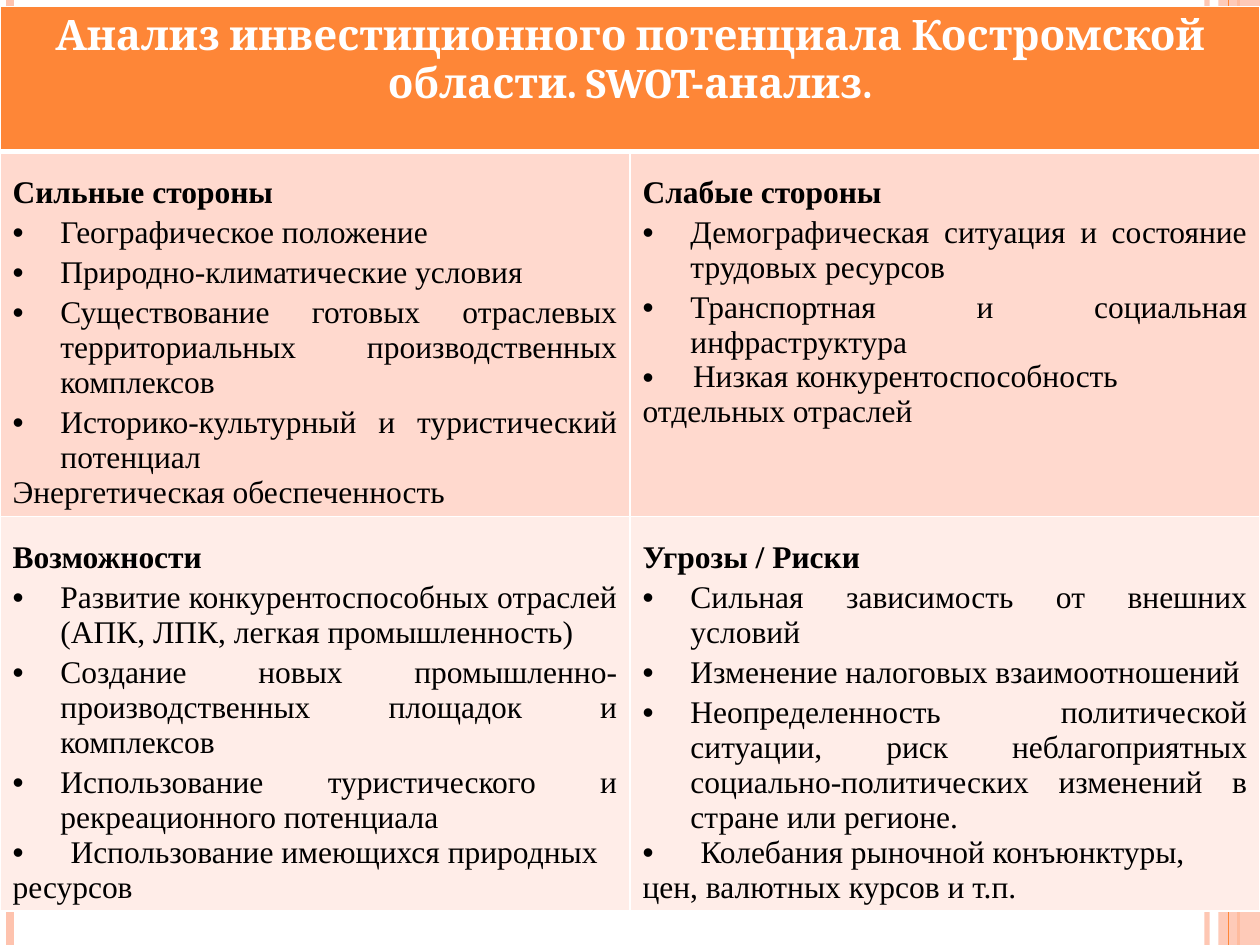
import pptx
import pptx.dml.color
import pptx.enum.shapes
import pptx.enum.text
import pptx.oxml.ns
import pptx.util
from lxml import etree

Inches = pptx.util.Inches
Pt = pptx.util.Pt
ALIGN = pptx.enum.text.PP_ALIGN
qn = pptx.oxml.ns.qn

COLORS = {
    "accent": "FE8637",
    "stripe": "FEC3AE",
    "upper": "FFD9CE",
    "lower": "FFEDE8",
    "white": "FFFFFF",
    "black": "000000",
}
TITLE = "Анализ инвестиционного потенциала Костромской области. SWOT-анализ."
QUADRANTS = [
    [
        {
            "heading": "Сильные стороны",
            "points": [
                "Географическое положение",
                "Природно-климатические условия",
                "Существование готовых отраслевых территориальных производственных комплексов",
                "Историко-культурный и туристический потенциал",
            ],
            "closing": "Энергетическая обеспеченность",
            "closing_format": {},
        },
        {
            "heading": "Слабые стороны",
            "points": [
                "Демографическая ситуация и состояние трудовых ресурсов",
                "Транспортная и социальная инфраструктура",
            ],
            "closing": "\tНизкая конкурентоспособность отдельных отраслей",
            "closing_format": {"bullet": True, "tab": 0.4},
        },
    ],
    [
        {
            "heading": "Возможности",
            "points": [
                "Развитие конкурентоспособных отраслей (АПК, ЛПК, легкая промышленность)",
                "Создание новых промышленно-производственных площадок и комплексов",
                "Использование туристического и рекреационного потенциала",
            ],
            "closing": "\tИспользование имеющихся природных ресурсов",
            "closing_format": {"bullet": True, "tab": 0.46},
        },
        {
            "heading": "Угрозы / Риски",
            "points": [
                "Сильная зависимость от внешних условий",
                "Изменение налоговых взаимоотношений",
                "Неопределенность политической ситуации, риск неблагоприятных "
                "социально-политических изменений в стране или регионе.",
            ],
            "closing": "\tКолебания рыночной конъюнктуры, цен, валютных курсов и т.п.",
            "closing_format": {"bullet": True, "tab": 0.46},
        },
    ],
]


def rgb(name):
    """Return the named colour."""
    return pptx.dml.color.RGBColor.from_string(COLORS[name])


def write(paragraph, text, font="Times New Roman", size=18, color="black", bold=False,
          align=ALIGN.LEFT, spacing=None, before=0, bullet=False, hang=0, tab=None):
    """Fill a paragraph with one formatted run."""
    run = paragraph.add_run()
    run.text = text
    run.font.name = font
    run.font.size = Pt(size)
    run.font.bold = bold
    run.font.color.rgb = rgb(color)
    paragraph.alignment = align
    paragraph.line_spacing = spacing
    paragraph.space_before = Pt(before)
    properties = paragraph._p.get_or_add_pPr()
    properties.set("marL", str(Inches(hang)))
    properties.set("indent", str(-Inches(hang)))
    if bullet:
        etree.SubElement(properties, qn("a:buFont"), typeface="Arial")
        etree.SubElement(properties, qn("a:buChar"), char="•")
    if tab:
        stops = etree.SubElement(properties, qn("a:tabLst"))
        etree.SubElement(stops, qn("a:tab"), pos=str(Inches(tab)), algn="l")


def set_opacity(fill_parent, percent):
    """Make the solid colour inside an element partly transparent."""
    color = next(fill_parent.iter(qn("a:srgbClr")))
    etree.SubElement(color, qn("a:alpha"), val=str(percent * 1000))


def add_stripe(slide, x, top, height, color, width, opacity=100):
    """Draw one vertical line of the backdrop."""
    stripe = slide.shapes.add_connector(
        pptx.enum.shapes.MSO_CONNECTOR.STRAIGHT,
        Inches(x), Inches(top), Inches(x), Inches(top + height))
    stripe.line.color.rgb = rgb(color)
    stripe.line.width = Pt(width)
    etree.SubElement(stripe._element.spPr, qn("a:effectLst"))
    if opacity < 100:
        set_opacity(stripe._element.spPr, opacity)


def add_backdrop(slide, left, top, width, height):
    """Draw the striped margins at both sides of the slide."""
    right = left + width
    add_stripe(slide, right - 0.42, top, height, "stripe", 3, 93)
    add_stripe(slide, left + 0.08, top, height, "stripe", 4.5)
    add_stripe(slide, right - 0.17, top, height, "accent", 1.5)
    band = slide.shapes.add_shape(
        pptx.enum.shapes.MSO_SHAPE.RECTANGLE,
        Inches(right - 0.33), Inches(top), Inches(0.33), Inches(height))
    band.shadow.inherit = False
    band.fill.solid()
    band.fill.fore_color.rgb = rgb("stripe")
    band.line.fill.background()
    set_opacity(band._element.spPr, 87)
    add_stripe(slide, right - 0.25, top, height, "accent", 0.75)


def style_cell(cell, fill, bottom=1, top=1):
    """Give a cell white borders and a solid fill."""
    properties = cell._tc.get_or_add_tcPr()
    for side, width in {"L": 1, "R": 1, "T": top, "B": bottom}.items():
        border = etree.SubElement(properties, qn(f"a:ln{side}"), w=str(Pt(width)))
        solid = etree.SubElement(border, qn("a:solidFill"))
        etree.SubElement(solid, qn("a:srgbClr"), val=COLORS["white"])
    cell.fill.solid()
    cell.fill.fore_color.rgb = rgb(fill)


def fill_quadrant(cell, quadrant):
    """Write heading, points and closing line of one quadrant."""
    frame = cell.text_frame
    write(frame.paragraphs[0], quadrant["heading"], bold=True,
          align=ALIGN.JUSTIFY, spacing=1.5, before=3)
    for point in quadrant["points"]:
        write(frame.add_paragraph(), point, align=ALIGN.JUSTIFY, before=3,
              bullet=True, hang=0.38, tab=0.5)
    write(frame.add_paragraph(), quadrant["closing"], **quadrant["closing_format"])


def add_swot_table(slide, left, top, width, row_heights):
    """Place the SWOT table with its merged header row."""
    table = slide.shapes.add_table(
        3, 2, Inches(left), Inches(top), Inches(width), Inches(sum(row_heights))).table
    for column in table.columns:
        column.width = Inches(width / 2)
    for row, height in zip(table.rows, row_heights):
        row.height = Inches(height)
    header = table.cell(0, 0)
    header.merge(table.cell(0, 1))
    for column in range(2):
        style_cell(table.cell(0, column), "accent", bottom=3)
    write(header.text_frame.paragraphs[0], TITLE, font="Cambria", size=24,
          color="white", bold=True, align=ALIGN.CENTER)
    for row, (quadrants, fill) in enumerate(zip(QUADRANTS, ("upper", "lower")), 1):
        for column, quadrant in enumerate(quadrants):
            cell = table.cell(row, column)
            style_cell(cell, fill, top=3 if row == 1 else 1)
            fill_quadrant(cell, quadrant)


def main():
    """Build and save the presentation."""
    deck = pptx.Presentation()
    deck.slide_width = Inches(10)
    deck.slide_height = Inches(7.5)
    slide = deck.slides.add_slide(deck.slide_layouts[6])
    add_backdrop(slide, 0, 0, 10, 7.5)
    add_swot_table(slide, 0, 0.05, 10, (1.15, 2.9, 3.13))
    deck.save("out.pptx")


if __name__ == "__main__":
    main()
